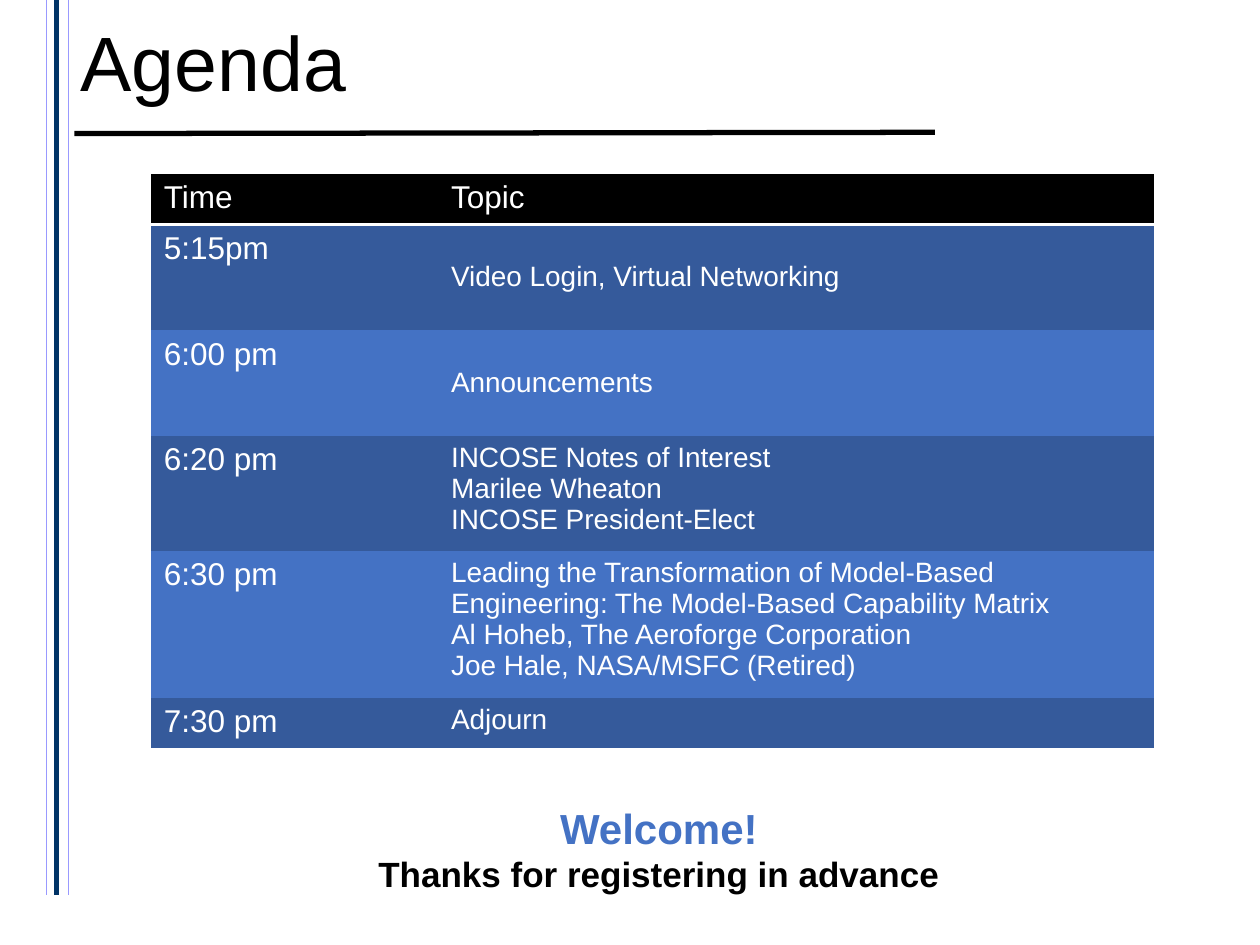
from lxml.etree import SubElement
from pptx import Presentation
from pptx.dml.color import RGBColor
from pptx.enum.shapes import MSO_CONNECTOR
from pptx.enum.text import MSO_ANCHOR, PP_ALIGN
from pptx.oxml import parse_xml
from pptx.oxml.ns import nsdecls, qn
from pptx.util import Inches, Pt

COLORS = {
    "black": "000000",
    "white": "FFFFFF",
    "navy": "003366",
    "lilac": "9999FF",
    "blue": "4472C4",
    "deep_blue": "355A9B",
}
NO_GRID_STYLE = "{2D5ABB26-0587-4C30-8999-92F81FD0307C}"

RULES = [
    (0.59, 1.06, 7.42, 1.05, "black", 3),
    (0.37, 0, 0.37, 7.1, "lilac", 1),
    (0.54, 0, 0.54, 7.1, "lilac", 0.5),
    (0.45, 0, 0.45, 7.1, "navy", 3),
]
COLUMN_WIDTHS = [2.28, 5.68]
AGENDA = [
    (0.84, "5:15pm", ["Video Login, Virtual Networking"], MSO_ANCHOR.MIDDLE),
    (0.84, "6:00 pm", ["Announcements"], MSO_ANCHOR.MIDDLE),
    (0.91, "6:20 pm", [
        "INCOSE Notes of Interest",
        "Marilee Wheaton",
        "INCOSE President-Elect",
    ], MSO_ANCHOR.TOP),
    (1.16, "6:30 pm", [
        "Leading the Transformation of Model-Based Engineering: "
        "The Model-Based Capability Matrix",
        "Al Hoheb, The Aeroforge Corporation",
        "Joe Hale, NASA/MSFC (Retired)",
    ], MSO_ANCHOR.TOP),
    (0.38, "7:30 pm", ["Adjourn"], MSO_ANCHOR.TOP),
]


def color(name):
    return RGBColor.from_string(COLORS[name])


def set_attributes(target, values):
    for attribute, value in values.items():
        setattr(target, attribute, value)


def write_lines(frame, lines, paragraph_format=None):
    for index, (text, size, color_name, bold) in enumerate(lines):
        paragraph = frame.paragraphs[0] if index == 0 else frame.add_paragraph()
        set_attributes(paragraph, paragraph_format or {})
        run = paragraph.add_run()
        run.text = text
        set_attributes(run.font, {"name": "Arial", "size": Pt(size), "bold": bold})
        run.font.color.rgb = color(color_name)


def add_rule(slide, x1, y1, x2, y2, color_name, width):
    rule = slide.shapes.add_connector(
        MSO_CONNECTOR.STRAIGHT, Inches(x1), Inches(y1), Inches(x2), Inches(y2))
    rule.line.color.rgb = color(color_name)
    rule.line.width = Pt(width)
    SubElement(rule._element.spPr, qn("a:effectLst"))


def add_text(slide, bounds, lines, frame_format, paragraph_format):
    frame = slide.shapes.add_textbox(*map(Inches, bounds)).text_frame
    set_attributes(frame, {"word_wrap": True, **frame_format})
    write_lines(frame, lines, paragraph_format)


def fill_cell(cell, fill_name, lines, anchor=MSO_ANCHOR.TOP):
    cell.fill.solid()
    cell.fill.fore_color.rgb = color(fill_name)
    cell.vertical_anchor = anchor
    write_lines(cell.text_frame, lines)


def underline_cell(cell):
    border = parse_xml(
        f'<a:lnB {nsdecls("a")} w="{Pt(2)}"><a:solidFill>'
        f'<a:srgbClr val="{COLORS["white"]}"/></a:solidFill></a:lnB>')
    cell._tc.get_or_add_tcPr().insert(0, border)


def add_agenda(slide):
    heights = [0.38] + [entry[0] for entry in AGENDA]
    frame = slide.shapes.add_table(
        len(heights), len(COLUMN_WIDTHS), Inches(1.2), Inches(1.38),
        Inches(sum(COLUMN_WIDTHS)), Inches(sum(heights)))
    frame._element.find(".//" + qn("a:tableStyleId")).text = NO_GRID_STYLE
    agenda = frame.table
    for column, width in zip(agenda.columns, COLUMN_WIDTHS):
        column.width = Inches(width)
    for row, height in zip(agenda.rows, heights):
        row.height = Inches(height)

    for column, heading in enumerate(["Time", "Topic"]):
        cell = agenda.cell(0, column)
        fill_cell(cell, "black", [(heading, 18, "white", False)])
        underline_cell(cell)
    for row, (_, time, topics, anchor) in enumerate(AGENDA, start=1):
        band = "deep_blue" if row % 2 else "blue"
        fill_cell(agenda.cell(row, 0), band, [(time, 18, "white", False)])
        topic_lines = [(topic, 16, "white", False) for topic in topics]
        fill_cell(agenda.cell(row, 1), band, topic_lines, anchor)


def main():
    presentation = Presentation()
    set_attributes(presentation, {
        "slide_width": Inches(10), "slide_height": Inches(7.5)})
    slide = presentation.slides.add_slide(presentation.slide_layouts[6])
    for rule in RULES:
        add_rule(slide, *rule)
    no_margins = dict.fromkeys(
        ["margin_left", "margin_top", "margin_right", "margin_bottom"], 0)
    add_text(slide, (0.64, 0.19, 6.95, 0.67), [("Agenda", 44, "black", False)],
             {"vertical_anchor": MSO_ANCHOR.MIDDLE, **no_margins},
             {"line_spacing": 0.9})
    add_text(slide, (0.88, 6.32, 8.7, 0.84), [
        ("Welcome!", 24, "blue", True),
        ("Thanks for registering in advance", 20, "black", True),
    ], {}, {"alignment": PP_ALIGN.CENTER})
    add_agenda(slide)
    presentation.save("out.pptx")


if __name__ == "__main__":
    main()
